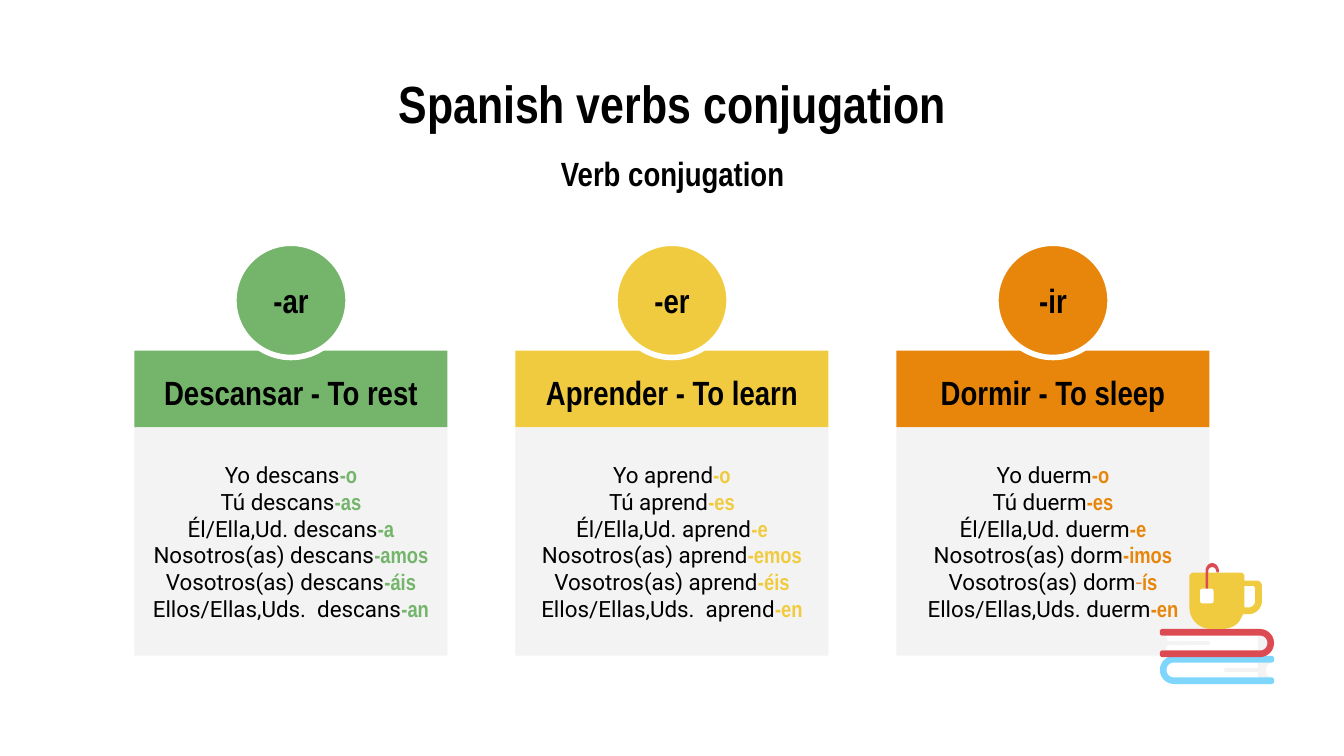
from math import cos, radians, sin

from pptx import Presentation
from pptx.dml.color import RGBColor
from pptx.enum.shapes import MSO_SHAPE as SHAPE
from pptx.enum.text import MSO_ANCHOR, MSO_AUTO_SIZE, PP_ALIGN
from pptx.util import Inches, Pt

HEAD, BODY = "Arial Narrow", "Roboto"
BLACK, WHITE, GRAY = "000000", "FFFFFF", "F3F3F3"
GREEN, YELLOW, ORANGE = "74B46B", "F1CB3F", "E8860B"
RED, BLUE, HYPHEN = "DD4B52", "7ED6FC", "E69138"

PRONOUNS = ["Yo", "Tú", "Él/Ella,Ud.", "Nosotros(as)", "Vosotros(as)",
            "Ellos/Ellas,Uds."]
# Each form is stem|ending; a middle part is a hyphen in plain type.
VERBS = [
    ("-ar", "Descansar - To rest", GREEN,
     ["descans|-o", "descans|-as", "descans|-a", "descans|-amos",
      "descans|-áis", " descans|-an"]),
    ("-er", "Aprender - To learn", YELLOW,
     ["aprend|-o", "aprend|-es", "aprend|-e", "aprend|-emos",
      "aprend|-éis", " aprend|-en"]),
    ("-ir", "Dormir - To sleep", ORANGE,
     ["duerm|-o", "duerm|-es", "duerm|-e", "dorm|-imos",
      "dorm|-|ís", "duerm|-en"]),
]


def rgb(color):
    return RGBColor.from_string(color)


def style_run(r, size, font=HEAD, color=BLACK, bold=True):
    r.font.size, r.font.name, r.font.bold = Pt(size), font, bold
    r.font.color.rgb = rgb(color)


def setup_frame(sp, side=0.1):
    tf = sp.text_frame
    tf.word_wrap, tf.auto_size = True, MSO_AUTO_SIZE.NONE
    tf.vertical_anchor = MSO_ANCHOR.MIDDLE
    tf.margin_left = tf.margin_right = Inches(side)
    tf.margin_top = tf.margin_bottom = Inches(0.1)
    return tf


def set_heading(sp, text, size, side=0.1, spacing=1.0, after=0):
    tf = setup_frame(sp, side)
    tf.text = text
    p = tf.paragraphs[0]
    p.alignment, p.line_spacing = PP_ALIGN.CENTER, spacing
    p.space_before, p.space_after = Pt(0), Pt(after)
    style_run(p.runs[0], size)


def paint(sp, color):
    sp.shadow.inherit = False
    sp.fill.solid()
    sp.fill.fore_color.rgb = rgb(color)
    sp.line.fill.background()
    return sp


def add_block(s, kind, x, y, w, h, color):
    return paint(s.shapes.add_shape(kind, *map(Inches, (x, y, w, h))), color)


def place_heading(sp, box, text, size, **spacing):
    sp.left, sp.top, sp.width, sp.height = map(Inches, box)
    set_heading(sp, text, size, **spacing)


def add_verb_card(s, x, y, w, ending, title, color, forms):
    disc, bar = 0.85, 0.57
    header = add_block(s, SHAPE.RECTANGLE, x, y + 0.8, w, bar, color)
    set_heading(header, title, 18, spacing=1.15, after=12)

    panel = add_block(s, SHAPE.RECTANGLE, x, y + 0.8 + bar, w, 1.7, GRAY)
    tf = setup_frame(panel)
    for i, (pronoun, form) in enumerate(zip(PRONOUNS, forms)):
        p = tf.add_paragraph() if i else tf.paragraphs[0]
        p.alignment = PP_ALIGN.CENTER
        stem, *hyphen, suffix = form.split("|")
        runs = [(f"{pronoun} {stem}", BODY, BLACK, False)]
        runs += [(part, BODY, HYPHEN, False) for part in hyphen]
        runs.append((suffix, HEAD, color, True))
        for text, *style in runs:
            r = p.add_run()
            r.text = text
            style_run(r, 12, *style)

    circle = add_block(s, SHAPE.OVAL, x + (w - disc) / 2, y, disc, disc, color)
    circle.line.color.rgb, circle.line.width = rgb(WHITE), Pt(3)
    set_heading(circle, ending, 18, side=0)


def arc(cx, cy, rx, ry, start, end, steps=12):
    angles = [radians(start + (end - start) * i / steps) for i in range(steps + 1)]
    return [(cx + rx * cos(a), cy + ry * sin(a)) for a in angles]


def add_outline(s, color, *contours):
    """Draw closed contours, given as points in inches, as one shape."""
    builder = None
    for contour in contours:
        start, *rest = [(Inches(x), Inches(y)) for x, y in contour]
        if builder is None:
            builder = s.shapes.build_freeform(*start)
        else:
            builder.move_to(*start)
        builder.add_line_segments(rest, close=True)
    paint(builder.convert_to_shape(), color)


def add_book(s, x, y, w, h, color, split, page_colors, spine_right=False):
    """Draw a closed book whose pages change colour at split from the spine."""
    mid, cover, r = h / 2, 0.05, 0.02
    edge, hollow = w - 0.02, mid - cover

    def draw(fill, points):
        add_outline(s, fill, [(x + (w - u if spine_right else u), y + v)
                              for u, v in points])

    mouth = arc(edge, mid, cover, hollow, 270, 90)
    draw(color, arc(mid, mid, mid, mid, 90, 270)
         + arc(w - r, r, r, r, -90, 0) + arc(w - r, cover - r, r, r, 0, 90)
         + mouth
         + arc(w - r, h - cover + r, r, r, -90, 0) + arc(w - r, h - r, r, r, 0, 90))
    draw(page_colors[0], arc(mid, mid, hollow, hollow, 90, 270)
         + [(split, cover), (split, h - cover)])
    draw(page_colors[1], [(split, h - cover), (split, cover)]
         + arc(edge, mid, cover - 0.01, hollow, 270, 90))


def add_cup(s, x, y):
    top, base = y + 0.07, y + 0.49
    body = ([(x, top + 0.02), (x + 0.02, top), (x + 0.39, top), (x + 0.41, top + 0.02),
             (x + 0.41, top + 0.06)]
            + arc(x + 0.5, top + 0.1, 0.04, 0.04, -90, 0)
            + arc(x + 0.44, top + 0.21, 0.1, 0.1, 0, 90)
            + [(x + 0.4, top + 0.31)]
            + arc(x + 0.25, base - 0.16, 0.16, 0.16, 40, 90)
            + arc(x + 0.16, base - 0.16, 0.16, 0.16, 90, 180))
    handle_hole = ([(x + 0.41, top + 0.1), (x + 0.48, top + 0.1), (x + 0.49, top + 0.12)]
                   + arc(x + 0.44, top + 0.21, 0.05, 0.05, 0, 90)
                   + [(x + 0.41, top + 0.26)])
    add_outline(s, YELLOW, body, handle_hole)
    loop_x, loop_y = x + 0.17, y + 0.06
    add_outline(s, RED, arc(loop_x, loop_y, 0.05, 0.06, 180, 360)
                + [(loop_x + 0.05, top), (loop_x + 0.03, top)]
                + arc(loop_x, loop_y, 0.03, 0.03, 360, 180)
                + [(loop_x - 0.03, y + 0.23), (loop_x - 0.05, y + 0.23)])
    add_block(s, SHAPE.ROUNDED_RECTANGLE, x + 0.08, y + 0.19, 0.1, 0.11, WHITE)


def add_books_and_cup(s, x, y):
    w, h = 0.85, 0.21
    add_book(s, x, y + 0.69, w, h, BLUE, 0.73, (WHITE, GRAY))
    add_book(s, x, y + 0.49, w, h, RED, 0.12, (GRAY, WHITE), spine_right=True)
    add_cup(s, x + 0.22, y)
    for dx, dy in ((0.06, 0.58), (0.48, 0.78)):
        add_block(s, SHAPE.ROUNDED_RECTANGLE, x + dx, y + dy, 0.31, 0.03, GRAY)


def add_conjugation_slide(prs):
    s = prs.slides.add_slide(prs.slide_layouts[0])
    place_heading(s.shapes.title, (0.5, 0.45, 9, 0.63), "Spanish verbs conjugation", 28)
    place_heading(s.placeholders[1], (2.96, 1.08, 4.09, 0.37), "Verb conjugation", 18,
                  spacing=1.15, after=12)
    card_w, margin = 2.33, 1
    step = (10 - 2 * margin - card_w) / (len(VERBS) - 1)
    for i, verb in enumerate(VERBS):
        add_verb_card(s, margin + i * step, 1.81, card_w, *verb)
    add_books_and_cup(s, 8.63, 4.19)


def main():
    prs = Presentation()
    prs.slide_width = Inches(10)
    prs.slide_height = prs.slide_width * 9 // 16
    add_conjugation_slide(prs)
    prs.save("out.pptx")


if __name__ == "__main__":
    main()
